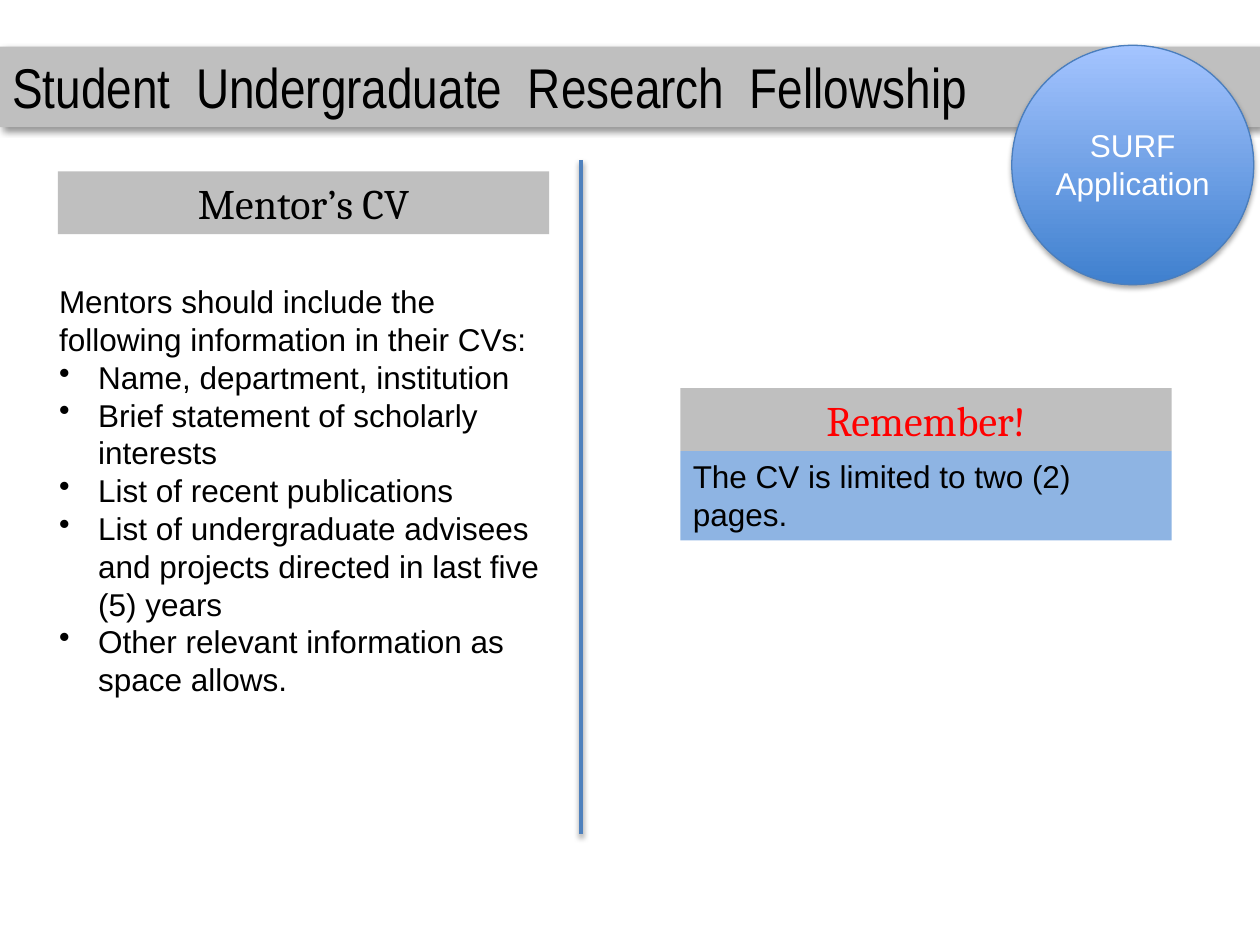
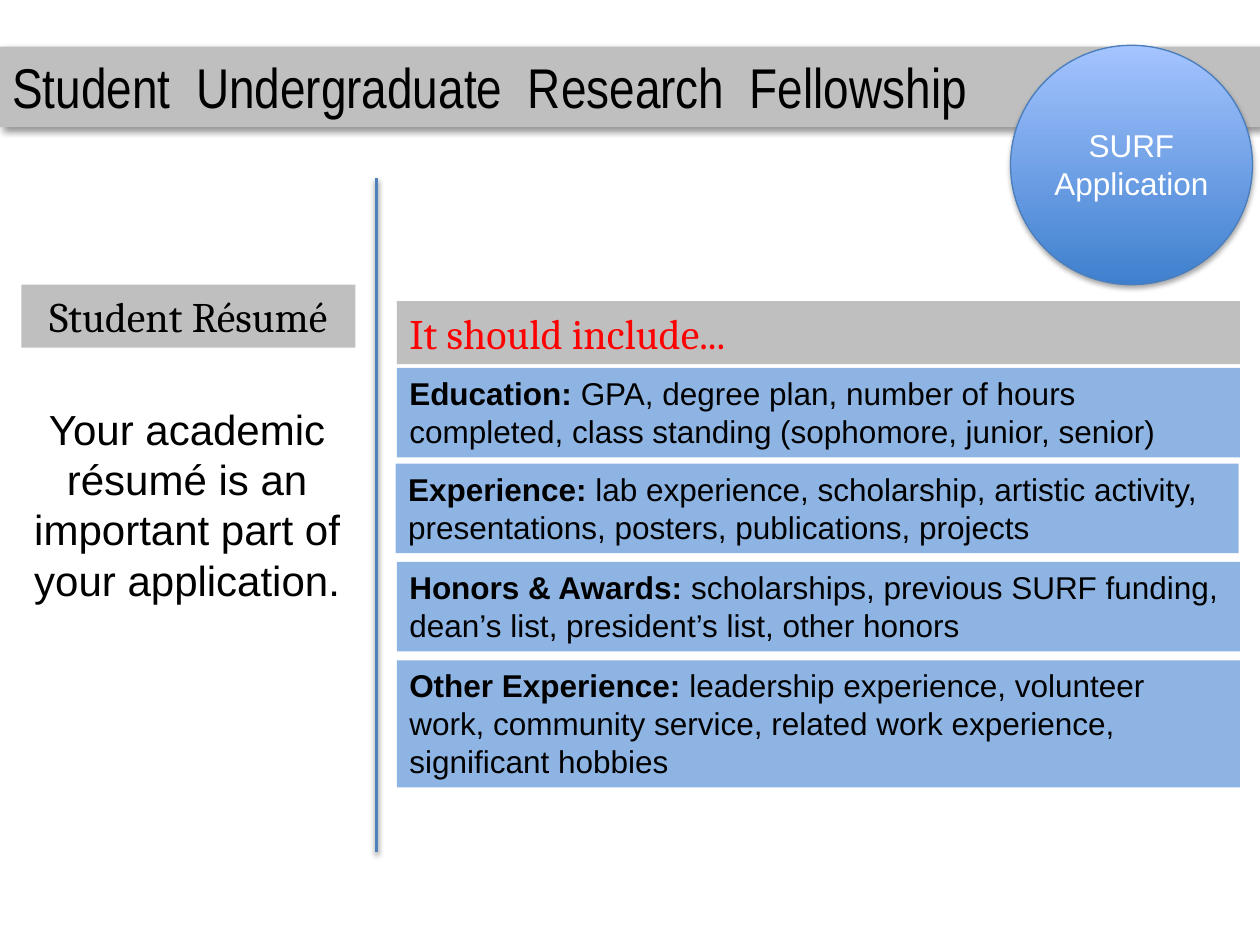
from lxml.etree import SubElement
from pptx import Presentation
from pptx.dml.color import RGBColor
from pptx.enum.shapes import MSO_CONNECTOR, MSO_SHAPE
from pptx.enum.text import MSO_ANCHOR, PP_ALIGN
from pptx.oxml.ns import qn
from pptx.util import Inches, Pt

HUES = {
    "gray": "BFBFBF", "pale": "8EB4E3", "rule": "4F81BD", "edge": "4B7EBC",
    "deep": "3F80CE", "light": "A4C4FF",
    "black": "000000", "white": "FFFFFF", "red": "FF0000",
}
INK = {name: RGBColor.from_string(code) for name, code in HUES.items()}
LEFT, MID = PP_ALIGN.LEFT, PP_ALIGN.CENTER
HEAD, BODY = ("Cambria", 24), ("Arial", 18)

deck = Presentation()
deck.slide_width, deck.slide_height = Inches(10), Inches(7.5)
COL, ROW = deck.slide_width / 10, deck.slide_height / 7.5


def shade(item, alpha=0, blur=0, dist=0, turn=0):
    list_ = SubElement(item._element.spPr, qn("a:effectLst"))
    if alpha:
        cast = SubElement(
            list_, qn("a:outerShdw"), blurRad=str(Pt(blur)), dist=str(Pt(dist)),
            dir=str(turn * 60000), algn="ctr", rotWithShape="0")
        tone = SubElement(cast, qn("a:srgbClr"), val=HUES["black"])
        SubElement(tone, qn("a:alpha"), val=str(alpha * 1000))


def box(page, spot, texts, style, ink="black", align=LEFT, fill=None, cast=()):
    x, y, w, h = spot
    area = int(x * COL), int(y * ROW), int(w * COL), int(h * ROW)
    if fill:
        item = page.shapes.add_shape(MSO_SHAPE.RECTANGLE, *area)
        item.fill.solid()
        item.fill.fore_color.rgb = INK[fill]
        item.line.fill.background()
        shade(item, *cast)
    else:
        item = page.shapes.add_textbox(*area)
    frame = item.text_frame
    frame.word_wrap = True
    frame.vertical_anchor = MSO_ANCHOR.TOP
    for n, parts in enumerate(texts):
        para = frame.paragraphs[0] if n == 0 else frame.add_paragraph()
        para.alignment = align
        para.font.name, para.font.size = style[0], Pt(style[1])
        para.font.color.rgb = INK[ink]
        for k, part in enumerate(parts):
            run = para.add_run()
            run.text = part
            if len(parts) > 1:
                run.font.bold = k == 0
    return item


pages = []
for disc, label, wide, rule, top in (
    (8.03, 8.11, 1.76, 4.61, 1.27),
    (8.02, 8.18, 1.6, 2.99, 1.41),
):
    page = deck.slides.add_slide(deck.slide_layouts[6])
    pages.append(page)
    box(page, (0, 0.37, 10, 0.64), [["Student  Undergraduate  Research  Fellowship"]],
        ("Arial Narrow", 32), fill="gray", cast=(43, 4, 3, 45))

    badge = page.shapes.add_shape(
        MSO_SHAPE.FLOWCHART_CONNECTOR,
        int(disc * COL), int(0.36 * ROW), int(1.92 * COL), int(1.9 * ROW))
    badge.fill.gradient()
    badge.fill.gradient_angle = 90
    for stop, name in zip(badge.fill.gradient_stops, ("deep", "light")):
        stop.color.rgb = INK[name]
    badge.line.color.rgb = INK["edge"]
    badge.line.width = Pt(0.75)
    shade(badge, 35, 3.1, 1.8, 90)
    box(page, (label, 0.95, wide, 0.71), [["SURF Application"]], BODY, "white", MID)

    line = page.shapes.add_connector(
        MSO_CONNECTOR.STRAIGHT, int(rule * COL), int(top * ROW),
        int(rule * COL), int((top + 5.35) * ROW))
    line.line.color.rgb = INK["rule"]
    line.line.width = Pt(2)
    shade(line, 38, 3.1, 1.6, 90)

mentor, resume = pages

box(mentor, (5.4, 3.08, 3.9, 0.5), [["Remember!"]], HEAD, "red", MID, "gray")
box(mentor, (5.4, 3.58, 3.9, 0.71), [["The CV is limited to two (2) pages."]],
    BODY, fill="pale")
guide = box(mentor, (0.37, 2.19, 4.11, 3.43), [
    ["Mentors should include the following information in their CVs:"],
    ["Name, department, institution"],
    ["Brief statement of scholarly interests"],
    ["List of recent publications"],
    ["List of undergraduate advisees and projects directed in last five (5) years"],
    ["Other relevant information as space allows."],
], BODY)
for para in guide.text_frame.paragraphs[1:]:
    props = para._p.get_or_add_pPr()
    props.set("marL", str(Inches(0.31)))
    props.set("indent", str(-Inches(0.31)))
    mark = props.makeelement(qn("a:buChar"), {"char": "•"})
    props.insert(0, mark)
box(mentor, (0.46, 1.36, 3.9, 0.5), [["Mentor’s CV"]], HEAD, align=MID, fill="gray")

box(resume, (3.15, 2.39, 6.69, 0.5), [["It should include..."]], HEAD, "red", fill="gray")
for x, y, high, lead, rest in (
    (3.15, 2.92, 0.71, "Education: ",
     "GPA, degree plan, number of hours completed, class standing (sophomore, junior, senior)"),
    (3.14, 3.68, 0.71, "Experience: ",
     "lab experience, scholarship, artistic activity, presentations, posters, publications, projects"),
    (3.15, 4.46, 0.71, "Honors & Awards: ",
     "scholarships, previous SURF funding, dean’s list, president’s list, other honors"),
    (3.15, 5.24, 1.01, "Other Experience: ",
     "leadership experience, volunteer work, community service, related work experience, "
     "significant hobbies"),
):
    box(resume, (x, y, 6.69, high), [[lead, rest]], BODY, fill="pale")
box(resume, (0.13, 3.15, 2.71, 1.72),
    [["Your academic résumé is an important part of your application."]],
    ("Arial", 24), align=MID)
box(resume, (0.17, 2.26, 2.65, 0.5), [["Student Résumé"]], HEAD, align=MID, fill="gray")

deck.save("out.pptx")
